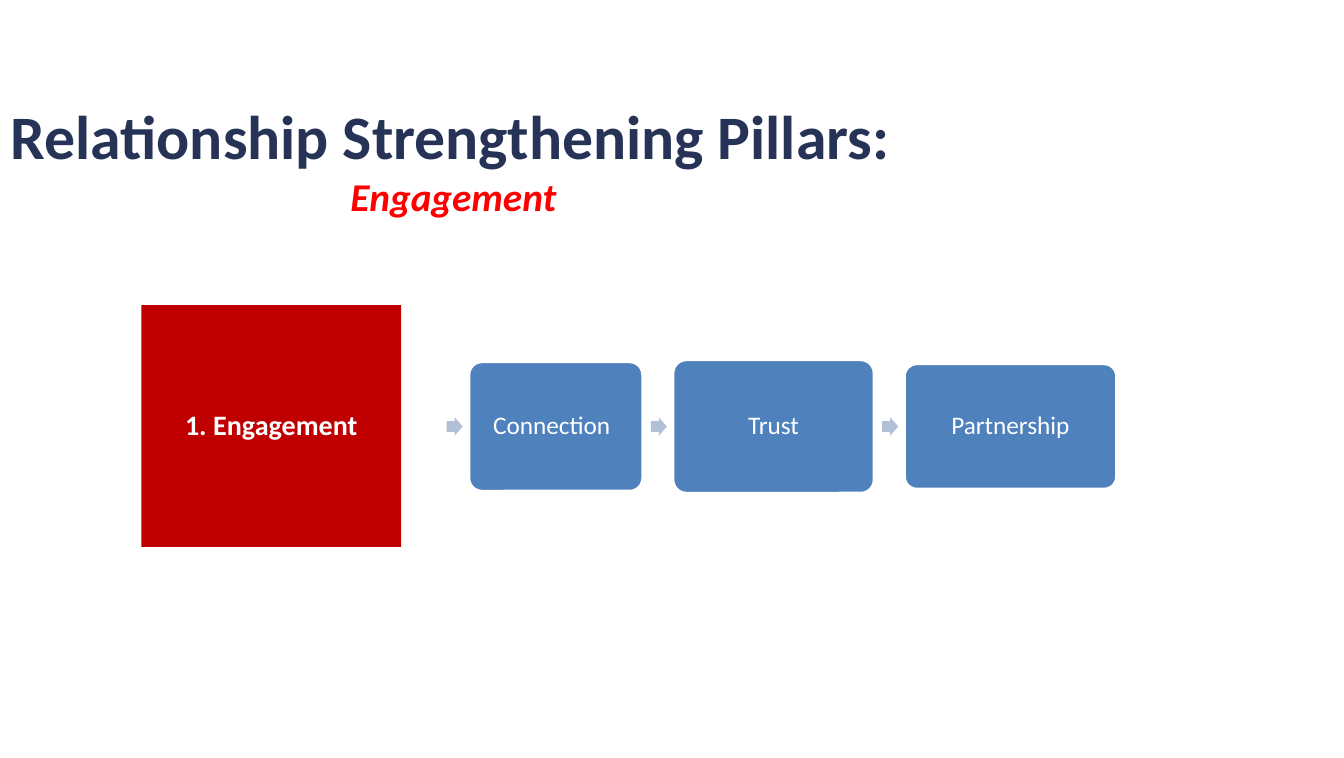
from dataclasses import dataclass

from pptx import Presentation, util as u
from pptx.dml.color import RGBColor
from pptx.enum import shapes, text

PX = 9144  # 100 px to the inch
KIND = shapes.MSO_SHAPE


@dataclass(frozen=True)
class Theme:
    font: str = "Calibri"
    navy: str = "263357"
    red: str = "FF0000"
    dark: str = "C00000"
    blue: str = "4F81BD"
    pale: str = "B1C0D7"
    white: str = "FFFFFF"
    head: int = 44
    sub: int = 28
    lead: int = 20
    body: int = 18


T = Theme()


def rgb(code):
    return RGBColor.from_string(code)


def px(*vals):
    return [u.Emu(v * PX) for v in vals]


def pad(frame, left, top, right, low):
    frame.word_wrap = True
    (frame.margin_left, frame.margin_top,
     frame.margin_right, frame.margin_bottom) = px(left, top, right, low)


def write(para, words, size, color, bold=False, italic=False):
    para.alignment = text.PP_ALIGN.CENTER
    run = para.add_run()
    run.text = words
    font = run.font
    font.name, font.size = T.font, u.Pt(size)
    font.bold, font.italic = bold, italic
    font.color.rgb = rgb(color)


def block(slide, kind, box, fill, edge=None):
    shape = slide.shapes.add_shape(kind, *px(*box))
    shape.shadow.inherit = False
    shape.fill.solid()
    shape.fill.fore_color.rgb = rgb(fill)
    if edge:
        shape.line.color.rgb = rgb(edge)
        shape.line.width = u.Pt(2)
    else:
        shape.line.fill.background()
    return shape


def label(shape, words, size, pads, bold=False):
    frame = shape.text_frame
    pad(frame, *pads)
    frame.vertical_anchor = text.MSO_ANCHOR.MIDDLE
    para = frame.paragraphs[0]
    para.line_spacing = 0.9
    write(para, words, size, T.white, bold)


# Title and subtitle
def title(slide, box):
    frame = slide.shapes.add_textbox(*px(*box)).text_frame
    pad(frame, 10, 5, 10, 5)
    write(frame.paragraphs[0], "Relationship Strengthening Pillars: ",
          T.head, T.navy, bold=True)
    write(frame.add_paragraph(), "Engagement ",
          T.sub, T.red, bold=True, italic=True)


# Red square naming the pillar
def pillar(slide, box):
    shape = block(slide, KIND.RECTANGLE, box, T.dark)
    label(shape, "1. Engagement", T.lead, (15, 0, 15, 0), bold=True)


# Row of steps, each led in by an arrow; nudge moves a label left
def chain(slide, box, steps):
    left, top, _, high = box
    mid = top + high // 2
    gap, lead, wide, tall = 30, 22, 16, 18
    for words, w, h, nudge in steps:
        arrow = block(slide, KIND.RIGHT_ARROW,
                      (left - lead, mid - tall // 2, wide, tall), T.pale)
        arrow.adjustments[0] = 0.6
        arrow.adjustments[1] = 0.5
        step = block(slide, KIND.ROUNDED_RECTANGLE,
                     (left, mid - h // 2, w, h), T.blue, T.white)
        step.adjustments[0] = 0.1
        label(step, words, T.body, (7, 7, 7 + 2 * nudge, 7))
        left += w + gap


def main():
    deck = Presentation()
    deck.slide_width, deck.slide_height = px(1330, 750)
    slide = deck.slides.add_slide(deck.slide_layouts[6])
    title(slide, (-98, 92, 1102, 131))
    pillar(slide, (140, 302, 257, 239))
    chain(slide, (464, 356, 641, 132), [
        ("Connection", 172, 128, 4),
        ("Trust", 199, 132, 0),
        ("Partnership", 210, 124, 0),
    ])
    deck.save("out.pptx")


if __name__ == "__main__":
    main()
